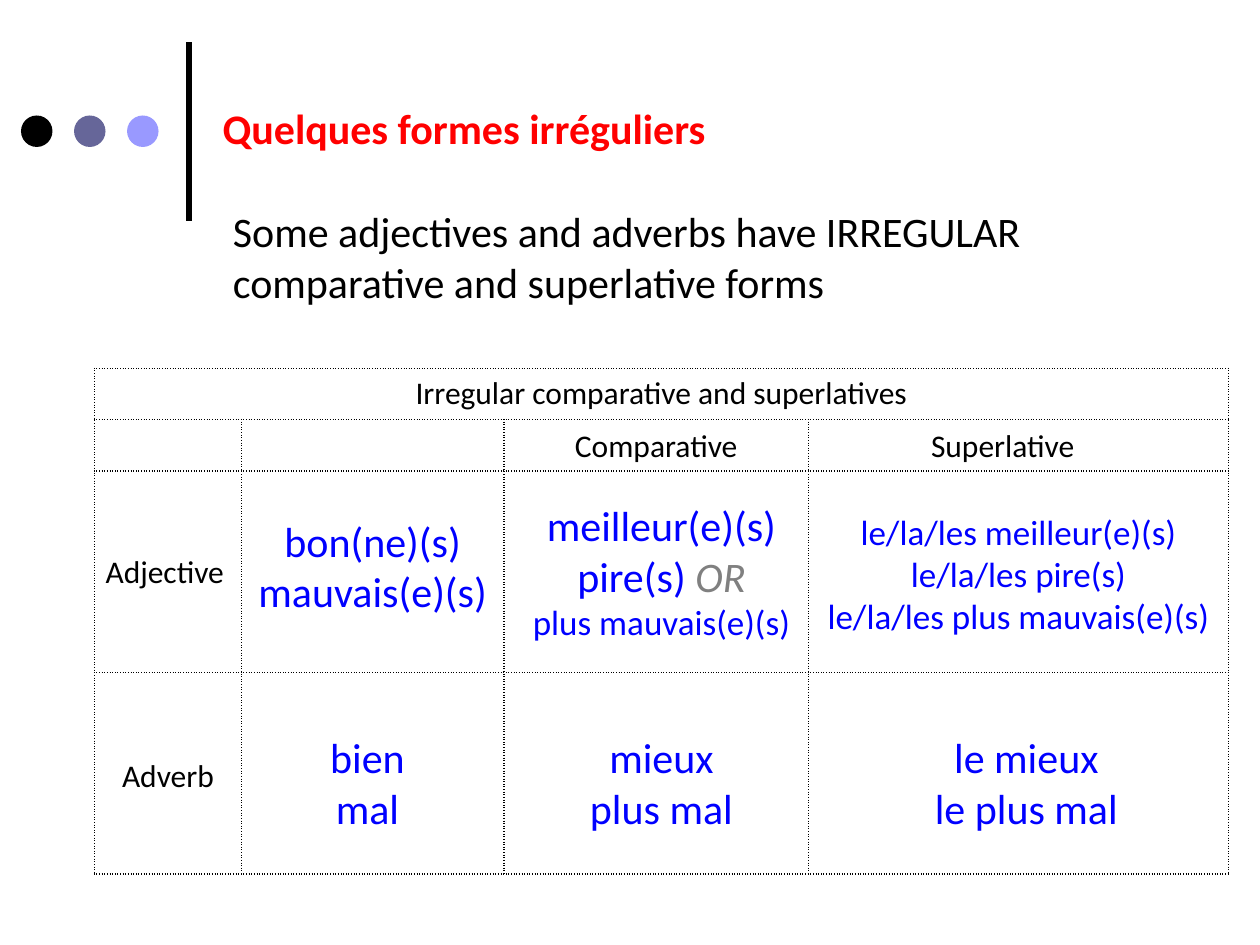
from lxml.etree import SubElement
from pptx import Presentation
from pptx.dml.color import RGBColor
from pptx.enum.shapes import MSO_CONNECTOR, MSO_SHAPE
from pptx.enum.text import MSO_ANCHOR, MSO_AUTO_SIZE, PP_ALIGN
from pptx.oxml.ns import qn
from pptx.util import Inches, Pt

COLORS = {
    "black": "000000",
    "slate": "666699",
    "lilac": "9999FF",
    "red": "FF0000",
    "blue": "0000FF",
    "gray": "808080",
}

LABEL = {"size": Pt(18), "color": "black"}
BODY = {"size": Pt(24), "color": "black"}
HEADING = {"size": Pt(24), "color": "red", "bold": True}
FORM = {"size": Pt(24), "color": "blue"}
SMALL_FORM = {"size": Pt(20), "color": "blue"}
REMARK = {"size": Pt(24), "color": "gray", "italic": True}

TABLE_AT = (9, 35.1)
COLUMNS = (14, 25, 29, 40)
ROWS = (4.86, 4.86, 19.2, 19.2)

LABELS = [
    ((8.5, 52, 14.4, 5), "Adjective"),
    ((8, 71.4, 16, 5), "Adverb"),
    ((51, 40, 23, 5), "Comparative"),
    ((84, 40, 23, 5), "Superlative"),
]

FORMS = [
    ((21, 48.5, 29, 10.9), FORM, ["bon(ne)(s)", "mauvais(e)(s)"]),
    ((22, 69.1, 26, 10.9), FORM, ["bien", "mal"]),
    ((48, 69.1, 30, 10.9), FORM, ["mieux", "plus mal"]),
    ((85, 69.1, 25.5, 10.9), FORM, ["le mieux", "le plus mal"]),
    ((77, 48, 40, 13.3), SMALL_FORM,
     ["le/la/les meilleur(e)(s)", "le/la/les pire(s)", "le/la/les plus mauvais(e)(s)"]),
]


def grid(units):
    return Inches(units / 12)


def color(name):
    return RGBColor.from_string(COLORS[name])


def format_font(font, style):
    font.name = "Calibri"
    for name, value in style.items():
        if name == "color":
            font.color.rgb = color(value)
        else:
            setattr(font, name, value)


def fill_text(frame, lines, align):
    settings = {
        "word_wrap": True,
        "auto_size": MSO_AUTO_SIZE.NONE,
        "vertical_anchor": MSO_ANCHOR.TOP,
    }
    for name, value in settings.items():
        setattr(frame, name, value)
    for index, spans in enumerate(lines):
        para = frame.paragraphs[0] if index == 0 else frame.add_paragraph()
        para.alignment = align
        for words, style in spans:
            span = para.add_run()
            span.text = words
            format_font(span.font, style)


def add_text(page, place, lines, align=PP_ALIGN.CENTER):
    box = page.shapes.add_textbox(*map(grid, place))
    fill_text(box.text_frame, lines, align)


def set_title(page, place, words):
    title = page.shapes.title
    for name, units in zip(("left", "top", "width", "height"), place):
        setattr(title, name, grid(units))
    fill_text(title.text_frame, [[(words, HEADING)]], PP_ALIGN.LEFT)


def add_rule(page, start, end):
    rule = page.shapes.add_connector(MSO_CONNECTOR.STRAIGHT, *map(grid, start + end))
    rule.line.color.rgb = color("black")
    rule.line.width = Pt(3)
    SubElement(rule._element.spPr, qn("a:effectLst"))


def add_dots(page):
    for index, name in enumerate(("black", "slate", "lilac")):
        place = (2 + 5.05 * index, 11, 3, 3)
        dot = page.shapes.add_shape(MSO_SHAPE.OVAL, *map(grid, place))
        dot.shadow.inherit = False
        dot.fill.solid()
        dot.fill.fore_color.rgb = color(name)
        dot.line.fill.background()


def dot_borders(cell):
    properties = cell._tc.get_or_add_tcPr()
    for side in ("lnL", "lnR", "lnT", "lnB"):
        border = SubElement(properties, qn(f"a:{side}"), w=str(Pt(1)))
        paint = SubElement(border, qn("a:solidFill"))
        SubElement(paint, qn("a:srgbClr"), val=COLORS["black"])
        SubElement(border, qn("a:prstDash"), val="sysDot")


def add_forms_table(page):
    place = TABLE_AT + (sum(COLUMNS), sum(ROWS))
    table = page.shapes.add_table(len(ROWS), len(COLUMNS), *map(grid, place)).table
    table.first_row = table.horz_banding = False
    for column, width in zip(table.columns, COLUMNS):
        column.width = grid(width)
    for row, height in zip(table.rows, ROWS):
        row.height = grid(height)
    for cell in table.iter_cells():
        dot_borders(cell)
        cell.fill.background()
    header = table.cell(0, 0)
    header.merge(table.cell(0, len(COLUMNS) - 1))
    para = header.text_frame.paragraphs[0]
    para.alignment = PP_ALIGN.CENTER
    span = para.add_run()
    span.text = "Irregular comparative and superlatives"
    format_font(span.font, LABEL)


def main():
    deck = Presentation()
    deck.slide_width, deck.slide_height = grid(120), grid(90)
    page = deck.slides.add_slide(deck.slide_layouts[5])

    add_rule(page, (18, 21), (18, 4))
    add_dots(page)
    set_title(page, (20, 9.2, 100, 6), "Quelques formes irréguliers")
    introduction = "Some adjectives and adverbs have IRREGULAR comparative and superlative forms"
    add_text(page, (21, 19, 93, 10.9), [[(introduction, BODY)]], PP_ALIGN.LEFT)
    add_forms_table(page)

    for place, words in LABELS:
        add_text(page, place, [[(words, LABEL)]])
    for place, style, lines in FORMS:
        add_text(page, place, [[(words, style)] for words in lines])
    add_text(page, (48, 47, 30, 15), [
        [("meilleur(e)(s)", FORM)],
        [("pire(s) ", FORM), ("OR", REMARK)],
        [("plus mauvais(e)(s)", SMALL_FORM)],
    ])

    deck.save("out.pptx")


if __name__ == "__main__":
    main()
